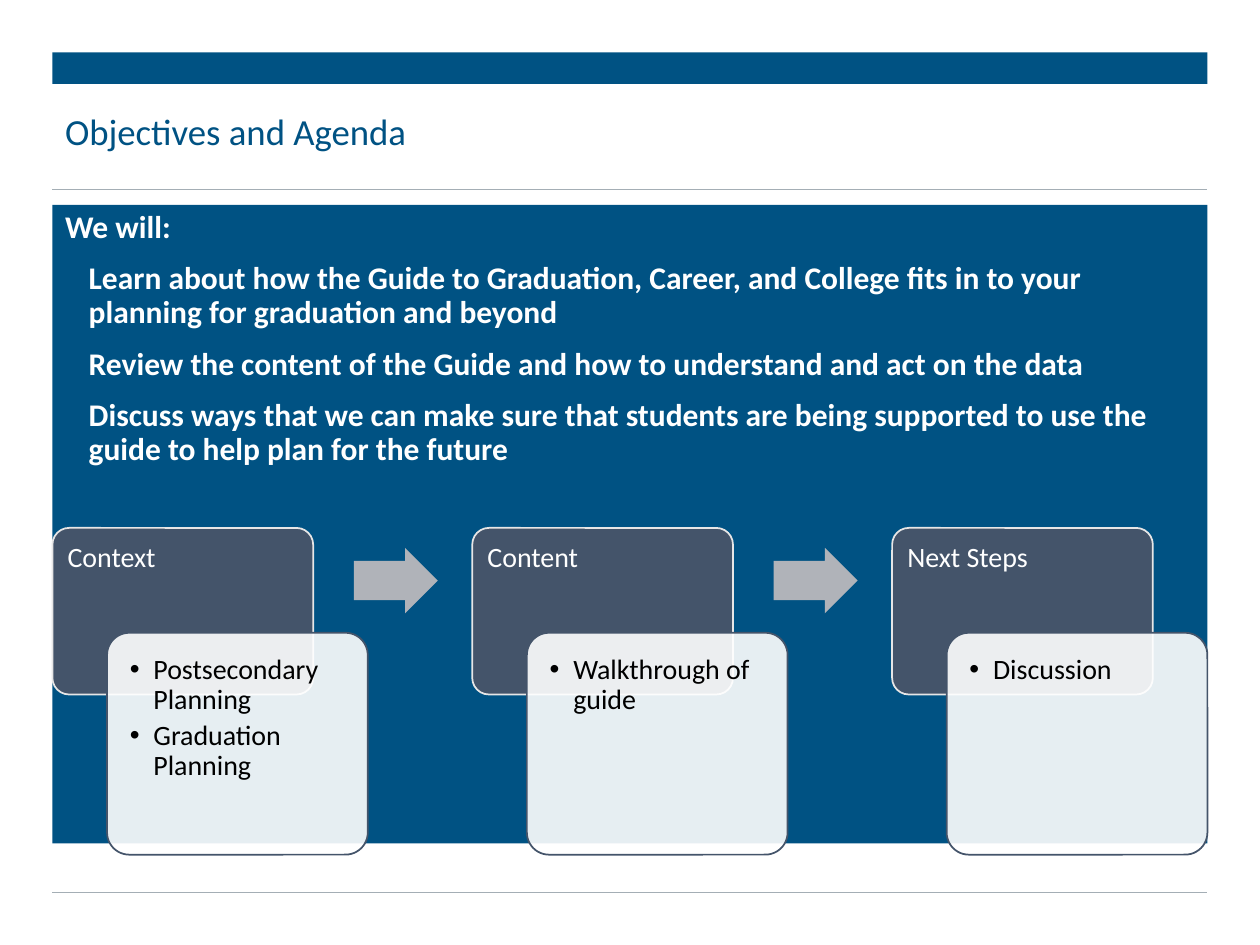
from dataclasses import dataclass

from pptx import Presentation
from pptx.dml.color import RGBColor
from pptx.enum.shapes import MSO_CONNECTOR, MSO_SHAPE
from pptx.enum.text import MSO_ANCHOR, MSO_AUTO_SIZE, PP_ALIGN
from pptx.oxml.ns import qn
from pptx.util import Pt
from lxml import etree

RECTANGLE, ROUNDED, ARROW = MSO_SHAPE.RECTANGLE, MSO_SHAPE.ROUNDED_RECTANGLE, MSO_SHAPE.RIGHT_ARROW
STRAIGHT = MSO_CONNECTOR.STRAIGHT
TOP, MIDDLE = MSO_ANCHOR.TOP, MSO_ANCHOR.MIDDLE
LEFT = PP_ALIGN.LEFT
NO_FIT = MSO_AUTO_SIZE.NONE


@dataclass(frozen=True)
class Theme:
    font: str = "Calibri"
    blue: str = "005283"
    slate: str = "44546A"
    pale: str = "E7E6E6"
    grey: str = "B0B3B9"
    rule: str = "A4AEB5"
    white: str = "FFFFFF"
    black: str = "000000"
    title_size: float = 21
    body_size: float = 18
    step_size: float = 16


THEME = Theme()

TITLE = "Objectives and Agenda"
INTRO = "We will:"
OBJECTIVES = [
    "Learn about how the Guide to Graduation, Career, and College fits in to your planning for graduation and beyond",
    "Review the content of the Guide and how to understand and act on the data",
    "Discuss ways that we can make sure that students are being supported to use the guide to help plan for the future",
]
AGENDA = [
    ("Context", ["Postsecondary Planning", "Graduation Planning"]),
    ("Content", ["Walkthrough of guide"]),
    ("Next Steps", ["Discussion"]),
]

MARGIN, WIDTH = 30, 660
HANG = 13.5
CARD_W, STEP_H, DETAIL_H = 149, 95.2, 126.8
STEP_TOP, DETAIL_TOP, DETAIL_SHIFT = 301.7, 361.6, 31.2
ARROW_SHIFT, ARROW_W, ARROW_H = 172.2, 48, 37.4
PITCH = (WIDTH - CARD_W - DETAIL_SHIFT) / (len(AGENDA) - 1)


def rgb(color):
    return RGBColor.from_string(color)


def place(part, left, top, width, height):
    part.left, part.top, part.width, part.height = Pt(left), Pt(top), Pt(width), Pt(height)


def set_bullet(paragraph, char=None, color=None):
    props = paragraph._p.get_or_add_pPr()
    hang = Pt(HANG) if char else 0
    props.set("marL", str(hang))
    props.set("indent", str(-hang))
    if not char:
        etree.SubElement(props, qn("a:buNone"))
        return
    bullet_color = etree.SubElement(props, qn("a:buClr"))
    etree.SubElement(bullet_color, qn("a:srgbClr"), val=color)
    etree.SubElement(props, qn("a:buFont"), typeface="Arial")
    etree.SubElement(props, qn("a:buChar"), char=char)


def write(part, lines, size, color, bold=False, inset=None, anchor=TOP, before=0, after=0):
    frame = part.text_frame
    frame.word_wrap = True
    frame.auto_size = NO_FIT
    frame.vertical_anchor = anchor
    if inset is not None:
        frame.margin_left = frame.margin_right = Pt(inset)
        frame.margin_top = frame.margin_bottom = Pt(inset)
    for index, (text, char, bullet_color) in enumerate(lines):
        paragraph = frame.paragraphs[0] if index == 0 else frame.add_paragraph()
        set_bullet(paragraph, char, bullet_color)
        paragraph.alignment = LEFT
        paragraph.line_spacing = 0.9
        paragraph.space_before = Pt(before if index else 0)
        paragraph.space_after = Pt(after)
        run = paragraph.add_run()
        run.text = text
        run.font.name, run.font.size, run.font.bold = THEME.font, Pt(size), bold
        run.font.color.rgb = rgb(color)


def add_block(slide, kind, box, fill, line=None, opacity=None):
    block = slide.shapes.add_shape(kind, *map(Pt, box))
    block.shadow.inherit = False
    block.fill.solid()
    block.fill.fore_color.rgb = rgb(fill)
    if line:
        block.line.color.rgb = rgb(line)
        block.line.width = Pt(1)
    else:
        block.line.fill.background()
    if kind == ROUNDED:
        block.adjustments[0] = 0.1
    if opacity:
        tint = block.element.spPr.find(qn("a:solidFill")).find(qn("a:srgbClr"))
        etree.SubElement(tint, qn("a:alpha"), val=str(opacity * 1000))
    return block


def add_rule(slide, top):
    rule = slide.shapes.add_connector(STRAIGHT, Pt(MARGIN), Pt(top), Pt(MARGIN + WIDTH), Pt(top))
    rule.line.color.rgb = rgb(THEME.rule)
    rule.line.width = Pt(0.5)
    etree.SubElement(rule.element.spPr, qn("a:effectLst"))


def add_stage(slide, left, heading, topics):
    step = add_block(slide, ROUNDED, (left, STEP_TOP, CARD_W, STEP_H), THEME.slate, THEME.pale)
    write(step, [(heading, None, None)], THEME.step_size, THEME.white, inset=5.9)
    detail = add_block(slide, ROUNDED, (left + DETAIL_SHIFT, DETAIL_TOP, CARD_W, DETAIL_H),
                       THEME.white, THEME.slate, opacity=90)
    topic_lines = [(topic, "•", THEME.black) for topic in topics]
    write(detail, topic_lines, THEME.step_size, THEME.black, inset=9.3, after=3)


def main():
    deck = Presentation()
    deck.slide_width, deck.slide_height = Pt(720), Pt(540)
    slide = deck.slides.add_slide(deck.slide_layouts[1])

    title, objectives = slide.placeholders[0], slide.placeholders[1]
    place(title, MARGIN, 42, WIDTH, 68.4)
    write(title, [(TITLE, None, None)], THEME.title_size, THEME.blue, anchor=MIDDLE)

    place(objectives, MARGIN, 117, WIDTH, 365)
    objectives.fill.solid()
    objectives.fill.fore_color.rgb = rgb(THEME.blue)
    objective_lines = [(INTRO, None, None)] + [(text, "▪", THEME.blue) for text in OBJECTIVES]
    write(objectives, objective_lines, THEME.body_size, THEME.white, bold=True, before=10)

    add_block(slide, RECTANGLE, (MARGIN, MARGIN, WIDTH, 18), THEME.blue)
    for top in (108, 510):
        add_rule(slide, top)

    arrow_top = STEP_TOP + 11.4
    for index, (heading, topics) in enumerate(AGENDA):
        left = MARGIN + index * PITCH
        add_stage(slide, left, heading, topics)
        if index < len(AGENDA) - 1:
            arrow = add_block(slide, ARROW, (left + ARROW_SHIFT, arrow_top, ARROW_W, ARROW_H), THEME.grey)
            arrow.adjustments[0], arrow.adjustments[1] = 0.6, 0.5

    deck.save("out.pptx")


if __name__ == "__main__":
    main()
